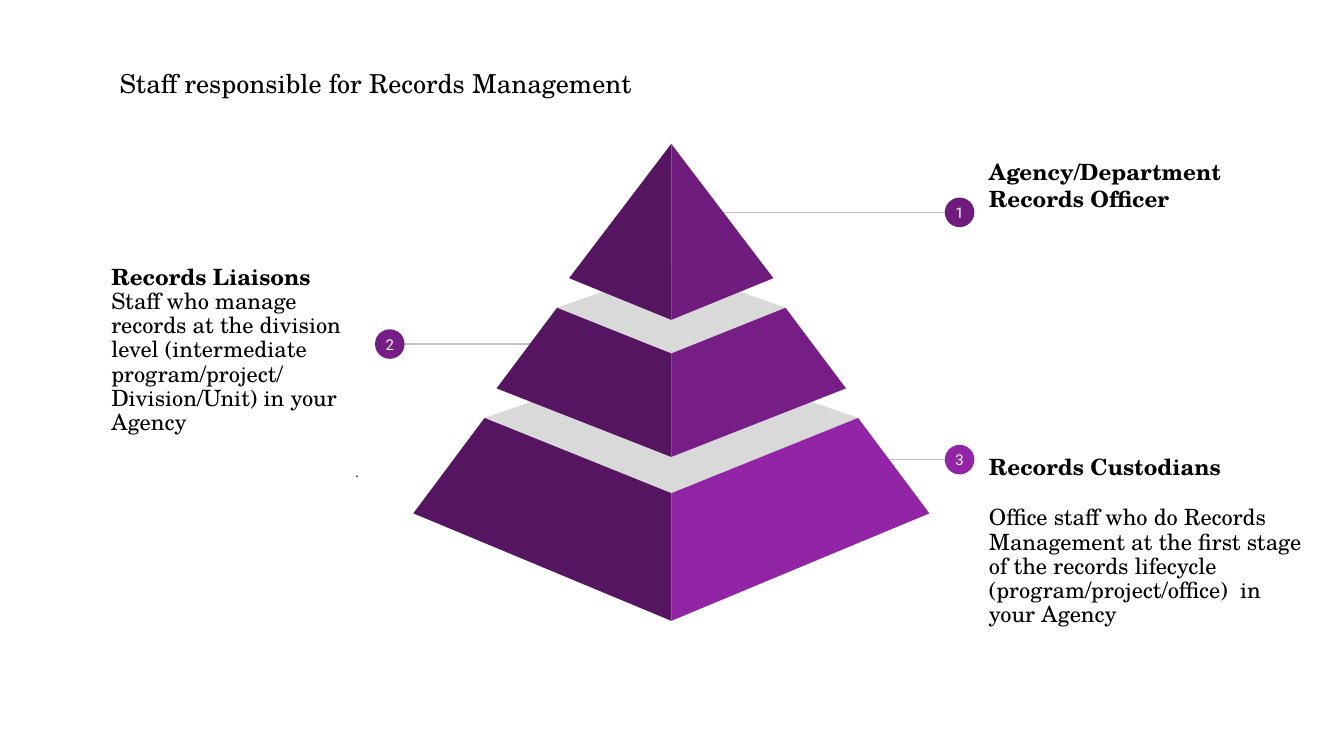
import pptx
import pptx.dml.color
import pptx.enum.shapes
import pptx.enum.text
import pptx.oxml.ns
import pptx.util
from lxml import etree

Inches, Pt = pptx.util.Inches, pptx.util.Pt
RGB = pptx.dml.color.RGBColor
Align = pptx.enum.text.PP_ALIGN
Anchor = pptx.enum.text.MSO_ANCHOR

BLACK = RGB(0x00, 0x00, 0x00)
WHITE = RGB(0xFF, 0xFF, 0xFF)
GREY = RGB(0xC2, 0xC2, 0xC2)
LID = RGB(0xD9, 0xD9, 0xD9)
DARK = RGB(0x55, 0x15, 0x61)
PLUM = RGB(0x70, 0x1C, 0x7F)
VIOLET = RGB(0x76, 0x1E, 0x86)
BRIGHT = RGB(0x92, 0x25, 0xA5)
SERIF, SANS = "TeX Gyre Schola", "Roboto"
WIDTH = 10
DOT = 0.22


def setup(frame, inset=0.1, top=0.1, anchor=Anchor.TOP):
    frame.word_wrap = True
    frame.vertical_anchor = anchor
    frame.margin_left = frame.margin_right = frame.margin_bottom = Inches(inset)
    frame.margin_top = Inches(top)


def write(frame, text, size=12, font=SERIF, color=BLACK, bold=False,
          align=Align.LEFT, before=0, spacing=1.0):
    """Fill the first paragraph, or add one when it is taken."""
    para = frame.paragraphs[0]
    if para.runs:
        para = frame.add_paragraph()
    para.alignment = align
    para.space_before = Pt(before)
    para.line_spacing = spacing
    run = para.add_run()
    run.text = text
    run.font.size, run.font.name, run.font.bold = Pt(size), font, bold
    run.font.color.rgb = color


def paint(shape, color):
    shape.shadow.inherit = False
    shape.fill.solid()
    shape.fill.fore_color.rgb = color
    shape.line.fill.background()


def head(slide, box):
    title = slide.shapes.title
    title.left, title.top, title.width, title.height = map(Inches, box)
    setup(title.text_frame, top=0.11)
    write(title.text_frame, "Staff responsible for Records Management", size=14)


def note(slide, box, top, parts):
    """Place a text block whose first line starts at top below the box edge."""
    frame = slide.shapes.add_textbox(*map(Inches, box)).text_frame
    setup(frame, top=top)
    for text, style in parts:
        write(frame, text, **style)


def marker(slide, label, x, y, reach, color):
    """Draw a numbered dot at x, y and its line to the pyramid at reach."""
    mid = y + DOT / 2
    line = slide.shapes.add_connector(
        pptx.enum.shapes.MSO_CONNECTOR.STRAIGHT,
        Inches(reach), Inches(mid), Inches(x + DOT / 2), Inches(mid))
    line.line.color.rgb = GREY
    line.line.width = Pt(0.75)
    etree.SubElement(line._element.spPr, pptx.oxml.ns.qn("a:effectLst"))
    dot = slide.shapes.add_shape(
        pptx.enum.shapes.MSO_SHAPE.OVAL,
        Inches(x), Inches(y), Inches(DOT), Inches(DOT))
    paint(dot, color)
    setup(dot.text_frame, inset=0, top=0, anchor=Anchor.MIDDLE)
    write(dot.text_frame, label, size=8, font=SANS, color=WHITE,
          align=Align.CENTER)


def facet(slide, points, color):
    start, *rest = [(Inches(x), Inches(y)) for x, y in points]
    path = slide.shapes.build_freeform(*start)
    path.add_line_segments(rest, close=True)
    paint(path.convert_to_shape(), color)


def pyramid(slide, box):
    left, top, width, _ = box
    mid = left + width / 2
    # half width and height of the upper and lower corners,
    # then the height of the back corner, front corner and front foot
    tiers = [
        (1.39, 2.04, 1.92, 2.75, 1.56, 2.60, 3.55, BRIGHT),
        (0.85, 1.22, 1.30, 1.82, 0.92, 1.56, 2.33, VIOLET),
        (0, 0, 0.76, 1.00, 0, 0, 1.31, PLUM),
    ]
    for upper, high, lower, low, back, front, foot, color in tiers:
        if upper:
            lid = [(-upper, high), (0, front), (upper, high), (0, back)]
            facet(slide, [(mid + x, top + y) for x, y in lid], LID)
        face = [(upper, high), (lower, low), (0, foot), (0, front)]
        for side, tone in ((-1, DARK), (1, color)):
            facet(slide, [(mid + side * x, top + y) for x, y in face], tone)


def main():
    deck = pptx.Presentation()
    deck.slide_width = Inches(WIDTH)
    deck.slide_height = Inches(WIDTH * 9 / 16)
    slide = deck.slides.add_slide(deck.slide_layouts[5])
    bold = {"bold": True}

    head(slide, (0.79, 0.39, 4.46, 0.44))
    note(slide, (7.26, 0.81, 2.04, 1.51), 0.43,
         [("Agency/Department Records Officer", bold)])
    note(slide, (0.73, 1.81, 2.04, 1.51), 0.15, [
        ("Records Liaisons", bold),
        ("Staff who manage records at the division level (intermediate "
         "program/project/ Division/Unit) in your Agency", {"spacing": 0.9}),
        (".", {"size": 8, "font": SANS, "align": Align.RIGHT, "before": 14.4}),
    ])
    note(slide, (7.26, 3.14, 2.54, 1.76), 0.23, [
        ("Records Custodians", bold),
        ("Office staff who do Records Management at the first stage of the "
         "records lifecycle (program/project/office)  in your Agency",
         {"spacing": 0.9, "before": 14.4}),
    ])
    marker(slide, "1", 7.03, 1.47, 5.37, PLUM)
    marker(slide, "2", 2.79, 2.45, 4.00, VIOLET)
    marker(slide, "3", 7.03, 3.31, 6.60, BRIGHT)
    pyramid(slide, (3.07, 1.07, 3.85, 3.55))
    deck.save("out.pptx")


if __name__ == "__main__":
    main()
